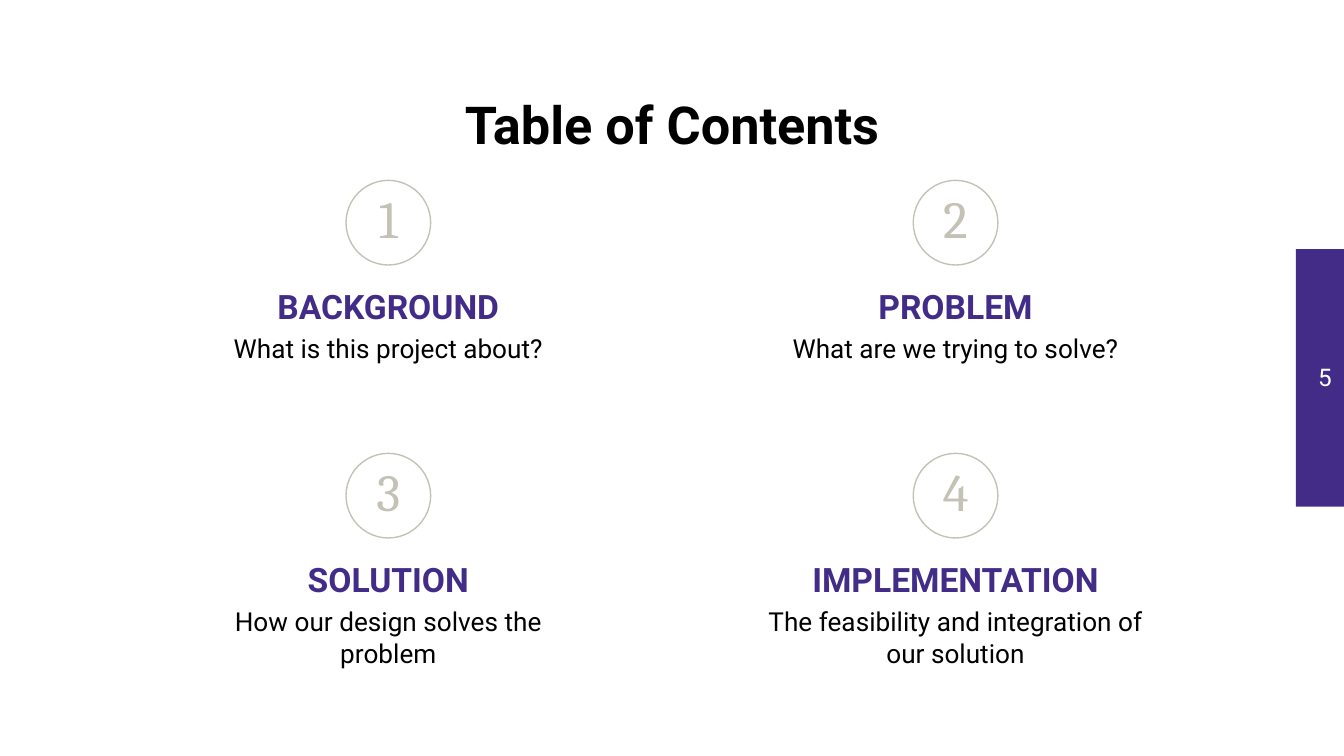
from pptx import Presentation
from pptx import util as u
from pptx.dml.color import RGBColor
from pptx.enum import shapes, text

PURPLE = RGBColor(0x42, 0x2C, 0x88)
STONE = RGBColor(0xC4, 0xC2, 0xB6)
BLACK = RGBColor(0, 0, 0)
WHITE = RGBColor(255, 255, 255)

SLIDE_W, SLIDE_H = 25.4, 14.29
MARGIN = 1.98
COLUMN_W = (SLIDE_W - 2 * MARGIN) / 2
ROW_TOP, ROW_PITCH = 3.41, 5.16
CIRCLE = 1.6
DESCRIPTION_W = 8.03

SECTIONS = [
    ("BACKGROUND", "What is this project about?"),
    ("PROBLEM", "What are we trying to solve?"),
    ("SOLUTION", "How our design solves the problem"),
    ("IMPLEMENTATION", "The feasibility and integration of our solution"),
]


def write(frame, words, size=14, color=BLACK, font="Roboto", bold=False,
          align=text.PP_ALIGN.CENTER, anchor=text.MSO_ANCHOR.TOP, after=0):
    """Fill a text frame with one formatted paragraph."""
    frame.word_wrap = True
    frame.auto_size = text.MSO_AUTO_SIZE.NONE
    frame.vertical_anchor = anchor
    frame.margin_left = frame.margin_right = u.Cm(0.25)
    frame.margin_top = frame.margin_bottom = u.Cm(0.25)
    paragraph = frame.paragraphs[0]
    paragraph.alignment = align
    paragraph.space_before = u.Pt(0)
    paragraph.space_after = u.Pt(after)
    run = paragraph.add_run()
    run.text = words
    run.font.size = u.Pt(size)
    run.font.name = font
    run.font.bold = bold
    run.font.color.rgb = color


class ContentsSlide:
    """Holds the slide and draws each kind of element on it, in cm."""

    def __init__(self, deck):
        self.slide = deck.slides.add_slide(deck.slide_layouts[5])
        self.slide.background.fill.solid()
        self.slide.background.fill.fore_color.rgb = WHITE

    def title(self, words, left, top, width, height):
        heading = self.slide.shapes.title
        heading.left, heading.top = u.Cm(left), u.Cm(top)
        heading.width, heading.height = u.Cm(width), u.Cm(height)
        write(heading.text_frame, words, size=28, bold=True)

    def label(self, words, left, top, width, height, **style):
        box = self.slide.shapes.add_textbox(
            u.Cm(left), u.Cm(top), u.Cm(width), u.Cm(height))
        write(box.text_frame, words, **style)

    def outline(self, kind, left, top, width, height, fill=None, line=None):
        figure = self.slide.shapes.add_shape(
            kind, u.Cm(left), u.Cm(top), u.Cm(width), u.Cm(height))
        figure.shadow.inherit = False
        if fill is None:
            figure.fill.background()
        else:
            figure.fill.solid()
            figure.fill.fore_color.rgb = fill
        if line is None:
            figure.line.fill.background()
        else:
            figure.line.color.rgb = line
            figure.line.width = u.Pt(0.75)

    def section(self, number, name, description):
        row, column = divmod(number - 1, 2)
        left = MARGIN + column * COLUMN_W
        top = ROW_TOP + row * ROW_PITCH
        middle = left + COLUMN_W / 2
        circle_left = middle - CIRCLE / 2
        self.outline(shapes.MSO_SHAPE.OVAL, circle_left, top,
                     CIRCLE, CIRCLE, line=STONE)
        self.label(str(number), circle_left, top + 0.04, CIRCLE, 1.32,
                   size=28, color=STONE, font="Cambria",
                   anchor=text.MSO_ANCHOR.MIDDLE)
        self.label(name, left, top + 1.75, COLUMN_W, 1.12,
                   size=18, color=PURPLE, bold=True, after=16)
        self.label(description, middle - DESCRIPTION_W / 2, top + 2.63,
                   DESCRIPTION_W, 1.93)


def main():
    deck = Presentation()
    deck.slide_width, deck.slide_height = u.Cm(SLIDE_W), u.Cm(SLIDE_H)
    contents = ContentsSlide(deck)

    # Page number tab on the right edge
    contents.outline(shapes.MSO_SHAPE.RECTANGLE, 24.49, 4.71, 0.91, 4.87,
                     fill=PURPLE)
    contents.label("5", 23.9, 6.6, 1.52, 1.09, size=13, color=WHITE,
                   align=text.PP_ALIGN.RIGHT)

    # Heading
    contents.title("Table of Contents", MARGIN, 1.5, 2 * COLUMN_W, 1.32)

    # Two by two grid of sections
    for number, (name, description) in enumerate(SECTIONS, start=1):
        contents.section(number, name, description)

    deck.save("out.pptx")


if __name__ == "__main__":
    main()
